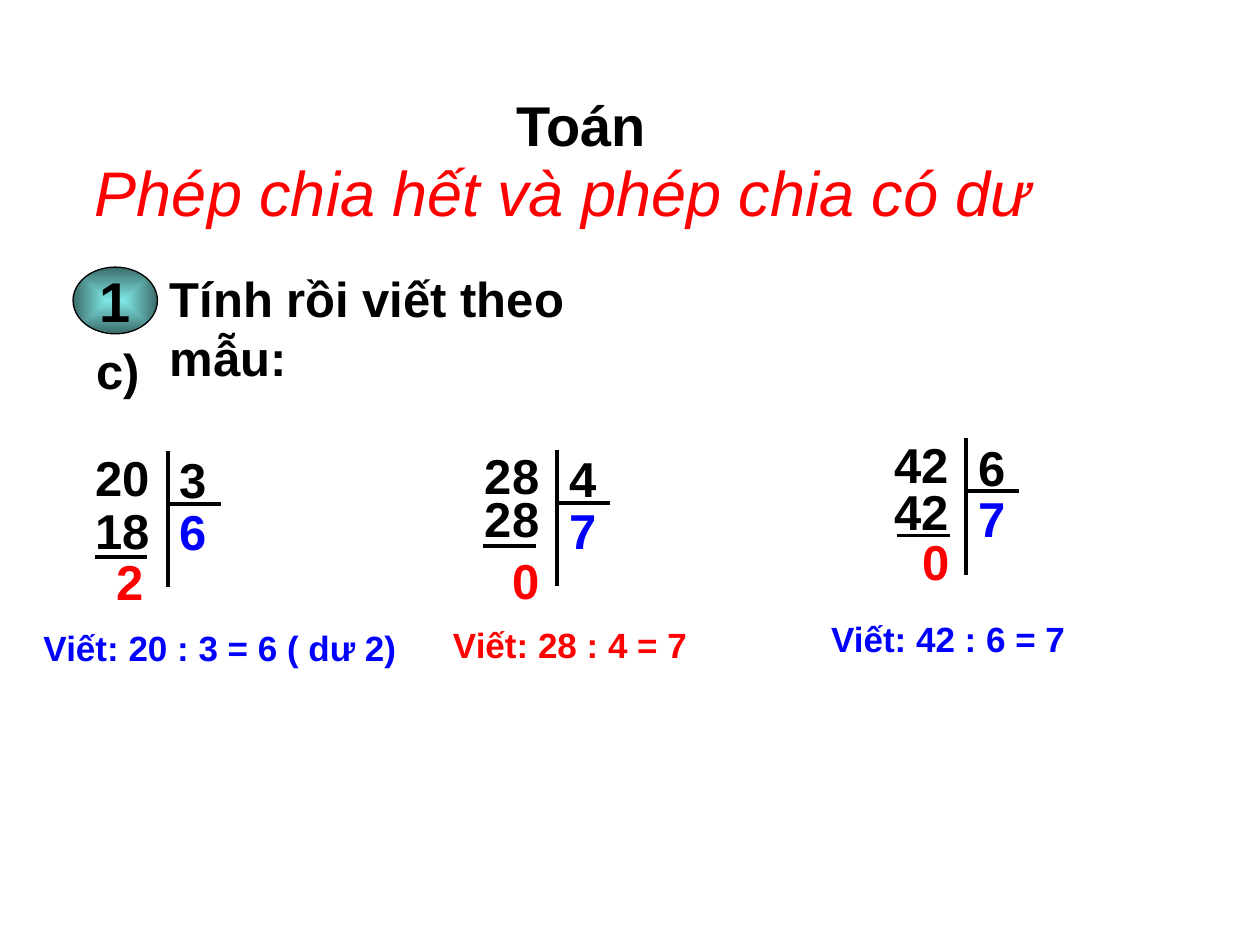
from dataclasses import dataclass

from pptx import Presentation
from pptx.dml.color import RGBColor
from pptx.enum.shapes import MSO_CONNECTOR, MSO_SHAPE
from pptx.enum.text import MSO_ANCHOR, MSO_AUTO_SIZE, PP_ALIGN
from pptx.oxml import parse_xml
from pptx.oxml.ns import nsdecls, qn
from pptx.oxml.xmlchemy import OxmlElement
from pptx.util import Inches, Pt

BLACK = RGBColor(0x00, 0x00, 0x00)
RED = RGBColor(0xFF, 0x00, 0x00)
BLUE = RGBColor(0x00, 0x00, 0xFF)
TEAL_LIGHT = RGBColor(0x7F, 0xE7, 0xE5)
TEAL_DARK = RGBColor(0x3B, 0x6B, 0x6A)

FONT = "Arial"
CELL_W, CELL_H = 0.67, 0.57   # box of one number
BAR_H, RULE_W = 1.08, 0.42    # division bar and short rules


@dataclass
class Division:
    """One worked division; x, y is the top of its vertical bar."""
    x: float
    y: float
    dividend: str
    divisor: str
    quotient: str
    product: str
    remainder: str
    product_dy: float
    remainder_dx: float
    remainder_dy: float
    rule_dx: float
    rule_dy: float


@dataclass
class Answer:
    x: float
    y: float
    width: float
    text: str
    color: RGBColor


DIVISIONS = [
    Division(1.33, 3.58, "20", "3", "6", "18", "2", 0.34, -0.5, 0.75, -0.58, 0.84),
    Division(4.42, 3.57, "28", "4", "7", "28", "0", 0.26, -0.45, 0.75, -0.59, 0.76),
    Division(7.67, 3.48, "42", "6", "7", "42", "0", 0.29, -0.45, 0.69, -0.55, 0.77),
]
ANSWERS = [
    Answer(0.17, 4.92, 3.17, " Viết: 20 : 3 = 6 ( dư 2)", BLUE),
    Answer(3.42, 4.9, 2.33, " Viết: 28 : 4 = 7", RED),
    Answer(6.42, 4.85, 2.42, " Viết: 42 : 6 = 7", BLUE),
]


def style_text(p, size: float, color: RGBColor, bold: bool = True) -> None:
    p.font.name = FONT
    p.font.size = Pt(size)
    p.font.bold = bold
    p.font.color.rgb = color


def add_text(s, x: float, y: float, w: float, h: float, text: str,
             size: float = 28, color: RGBColor = BLACK, bold: bool = True):
    tf = s.shapes.add_textbox(Inches(x), Inches(y), Inches(w), Inches(h)).text_frame
    tf.word_wrap = True
    tf.auto_size = MSO_AUTO_SIZE.SHAPE_TO_FIT_TEXT
    p = tf.paragraphs[0]
    p.text = text
    style_text(p, size, color, bold)
    return tf


def add_line(s, x: float, y: float, dx: float = 0, dy: float = 0) -> None:
    line = s.shapes.add_connector(MSO_CONNECTOR.STRAIGHT, Inches(x), Inches(y),
                                  Inches(x + dx), Inches(y + dy))
    line.line.color.rgb = BLACK
    line.line.width = Pt(2.25)
    line._element.spPr.append(OxmlElement("a:effectLst"))


def add_badge(s, x: float, y: float, w: float, h: float, text: str) -> None:
    sp = s.shapes.add_shape(MSO_SHAPE.OVAL, Inches(x), Inches(y), Inches(w), Inches(h))
    sp.shadow.inherit = False
    sp.line.color.rgb = BLACK
    sp.line.width = Pt(0.75)
    # Gradient from the centre outwards
    sp.fill.gradient()
    for stop, color in zip(sp.fill.gradient_stops, (TEAL_LIGHT, TEAL_DARK)):
        stop.color.rgb = color
    grad = sp._element.spPr.find(qn("a:gradFill"))
    grad.replace(grad.find(qn("a:lin")), parse_xml(
        f'<a:path {nsdecls("a")} path="shape">'
        '<a:fillToRect l="50000" t="50000" r="50000" b="50000"/></a:path>'))
    tf = sp.text_frame
    tf.word_wrap = False
    tf.vertical_anchor = MSO_ANCHOR.MIDDLE
    p = tf.paragraphs[0]
    p.text = text
    p.alignment = PP_ALIGN.CENTER
    style_text(p, 32, BLACK)


def add_subtitle(s) -> None:
    tf = add_text(s, 1.75, 1.17, 5.58, 0.83, "Phép chia hết và phép chia có dư ",
                  36, RED, bold=False)
    tf.word_wrap = False
    tf.auto_size = MSO_AUTO_SIZE.NONE
    p = tf.paragraphs[0]
    p.alignment = PP_ALIGN.CENTER
    p.font.italic = True
    # Thin outline around the letters
    p.runs[0]._r.get_or_add_rPr().insert(0, parse_xml(
        f'<a:ln {nsdecls("a")} w="{Pt(0.75)}"><a:solidFill>'
        f'<a:srgbClr val="{RED}"/></a:solidFill></a:ln>'))


def add_division(s, d: Division) -> None:
    numbers = [
        (d.dividend, -CELL_W, -0.08, BLACK),
        (d.divisor, 0, -0.06, BLACK),
        (d.quotient, 0, 0.35, BLUE),
        (d.product, -CELL_W, d.product_dy, BLACK),
        (d.remainder, d.remainder_dx, d.remainder_dy, RED),
    ]
    for text, dx, dy, color in numbers:
        add_text(s, d.x + dx, d.y + dy, CELL_W, CELL_H, text, color=color)
    add_line(s, d.x, d.y, dy=BAR_H)
    add_line(s, d.x, d.y + 0.42, dx=RULE_W)
    add_line(s, d.x + d.rule_dx, d.y + d.rule_dy, dx=RULE_W)


def main() -> None:
    prs = Presentation()
    prs.slide_width, prs.slide_height = Inches(10), Inches(7.5)
    s = prs.slides.add_slide(prs.slide_layouts[6])

    # Heading and exercise
    add_badge(s, 0.58, 2.12, 0.67, 0.53, "1")
    add_text(s, 1.25, 2.08, 4.25, 1.04, "Tính rồi viết theo mẫu:")
    add_text(s, 0.67, 2.65, CELL_W, CELL_H, "c)")
    add_text(s, 4, 0.67, 1.58, 0.63, "Toán", 32)
    add_subtitle(s)

    # Worked divisions and their answers
    for d in DIVISIONS:
        add_division(s, d)
    for a in ANSWERS:
        add_text(s, a.x, a.y, a.width, 0.43, a.text, 20, a.color)

    prs.save("out.pptx")


if __name__ == "__main__":
    main()
